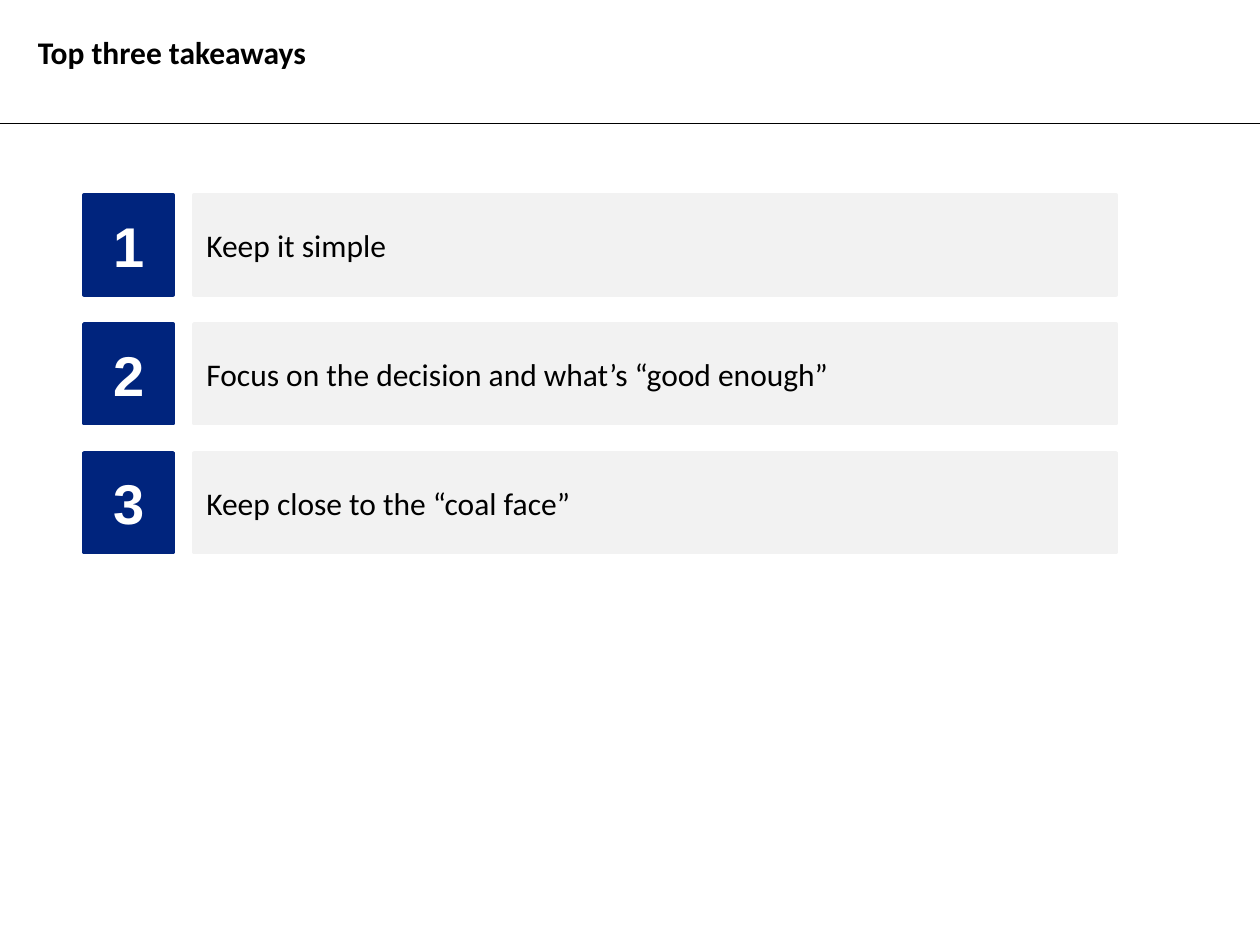
"""Build the slide with the top three takeaways as numbered bars."""
from dataclasses import dataclass

from lxml import etree
from pptx import Presentation
from pptx.dml.color import RGBColor as Rgb
from pptx.enum.shapes import MSO_CONNECTOR as Connector, MSO_SHAPE as Shape
from pptx.enum.text import MSO_ANCHOR as Anchor, MSO_AUTO_SIZE as AutoSize, PP_ALIGN as Align
from pptx.oxml.ns import qn
from pptx.util import Pt


@dataclass(frozen=True)
class Theme:
    black: Rgb = Rgb(0x00, 0x00, 0x00)
    white: Rgb = Rgb(0xFF, 0xFF, 0xFF)
    navy: Rgb = Rgb(0x00, 0x24, 0x7D)
    grey: Rgb = Rgb(0xF2, 0xF2, 0xF2)
    body_font: str = "Calibri"
    number_font: str = "Arial"
    body_size: int = 18
    number_size: int = 32


theme = Theme()


def write(box, text, font, size, color, bold=False, align=Align.LEFT, anchor=Anchor.MIDDLE):
    frame = box.text_frame
    frame.word_wrap = True
    frame.vertical_anchor = anchor
    para = frame.paragraphs[0]
    para.alignment = align
    span = para.add_run()
    span.text = text
    span.font.name = font
    span.font.size = Pt(size)
    span.font.bold = bold
    span.font.color.rgb = color


def add_block(group, left, top, width, height, color):
    block = group.shapes.add_shape(Shape.RECTANGLE, Pt(left), Pt(top), Pt(width), Pt(height))
    block.shadow.inherit = False
    block.fill.solid()
    block.fill.fore_color.rgb = color
    block.line.color.rgb = color
    block.line.width = Pt(2)
    return block


deck = Presentation()
deck.slide_width = Pt(720)
deck.slide_height = Pt(540)
page = deck.slides.add_slide(deck.slide_layouts[5])

title = page.shapes.title
title.left, title.top, title.width, title.height = Pt(14.4), Pt(15.1), Pt(510.5), Pt(29)
write(title, "Top three takeaways", theme.body_font, theme.body_size, theme.black,
      bold=True, anchor=Anchor.TOP)
title.text_frame.auto_size = AutoSize.SHAPE_TO_FIT_TEXT

rule = page.shapes.add_connector(Connector.STRAIGHT, Pt(0), Pt(70.5), Pt(720), Pt(70.5))
rule.line.color.rgb = theme.black
rule.line.width = Pt(0.75)
etree.SubElement(rule._element.spPr, qn("a:effectLst"))

takeaways = [
    "Keep it simple",
    "Focus on the decision and what’s “good enough”",
    "Keep close to the “coal face”",
]
first_top, row_step, row_height = 111.5, 73.6, 57

for index, takeaway in enumerate(takeaways):
    top = first_top + index * row_step
    row = page.shapes.add_group_shape()
    number = add_block(row, 48, top, 51, row_height, theme.navy)
    write(number, str(index + 1), theme.number_font, theme.number_size, theme.white,
          bold=True, align=Align.CENTER)
    bar = add_block(row, 110.8, top, 527, row_height, theme.grey)
    write(bar, takeaway, theme.body_font, theme.body_size, theme.black)

deck.save("out.pptx")
